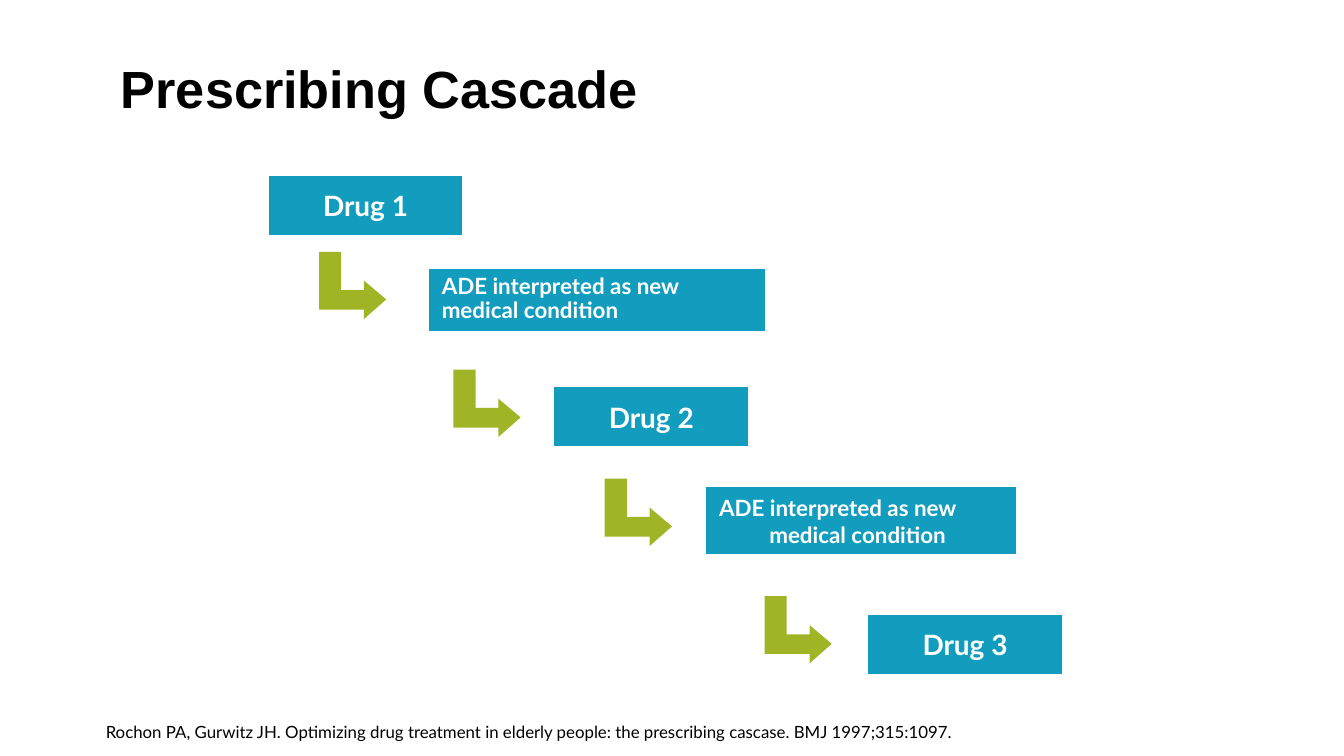
from pptx import Presentation
from pptx.dml.color import RGBColor
from pptx.enum.shapes import MSO_SHAPE
from pptx.enum.text import MSO_ANCHOR, PP_ALIGN
from pptx.util import Cm, Pt

# Content: lengths in cm
TITLE = "Prescribing Cascade"
REACTION = "ADE interpreted as new medical condition"
CITATION = ("Rochon PA, Gurwitz JH. Optimizing drug treatment in elderly people: "
            "the prescribing cascase. BMJ 1997;315:1097.")
DRUG_SIZE = (3.66, 1.12)
HANGING = 0.95
DRUGS = [("Drug 1", 5.08, 3.33), ("Drug 2", 10.48, 7.32), ("Drug 3", 16.41, 11.62)]
# left, top, width, height, hanging indent, line spacing
REACTIONS = [(8.1, 5.08, 6.35, 1.17, 0, 0.9), (13.34, 9.21, 5.87, 1.27, HANGING, 1.0)]
ARROWS = [(6.03, 4.76), (8.57, 6.99), (11.43, 9.05), (14.45, 11.27)]
# Bent arrow outline, as fractions of its square
ARROW_SIDE = 1.27
ARROW_OUTLINE = [(0, 0), (0.33, 0), (0.33, 0.57), (0.67, 0.57), (0.67, 0.43),
                 (1, 0.71), (0.67, 1), (0.67, 0.86), (0, 0.86)]

THEME = {
    "box": RGBColor(0x12, 0x9D, 0xBF),
    "arrow": RGBColor(0xA1, 0xB4, 0x26),
    "light": RGBColor(0xFF, 0xFF, 0xFF),
    "dark": RGBColor(0, 0, 0),
    "heading": "Arial",
    "body": "Lato",
    "title_size": 28,
    "drug_size": 15,
    "reaction_size": 12,
    "citation_size": 9,
}


def write(frame, text, size, color, family="body", bold=True, align=PP_ALIGN.LEFT,
          spacing=1.0, hanging=0):
    frame.text = text
    paragraph = frame.paragraphs[0]
    paragraph.alignment = align
    paragraph.line_spacing = spacing
    if hanging:
        properties = paragraph._p.get_or_add_pPr()
        properties.set("marL", str(Cm(hanging)))
        properties.set("indent", str(-Cm(hanging)))
    font = paragraph.font
    font.name = THEME[family]
    font.size = Pt(THEME[size])
    font.bold = bold
    font.color.rgb = THEME[color]


def paint(shape, color):
    shape.shadow.inherit = False
    shape.fill.solid()
    shape.fill.fore_color.rgb = THEME[color]
    shape.line.fill.background()


def add_box(shapes, left, top, width, height, anchor, wrap):
    box = shapes.add_shape(MSO_SHAPE.FLOWCHART_PROCESS,
                           Cm(left), Cm(top), Cm(width), Cm(height))
    paint(box, "box")
    box.text_frame.vertical_anchor = anchor
    box.text_frame.word_wrap = wrap
    return box.text_frame


def add_arrow(shapes, left, top):
    corners = [(Cm(left + x * ARROW_SIDE), Cm(top + y * ARROW_SIDE))
               for x, y in ARROW_OUTLINE]
    outline = shapes.build_freeform(*corners[0])
    outline.add_line_segments(corners[1:], close=True)
    paint(outline.convert_to_shape(), "arrow")


def main():
    deck = Presentation()
    deck.slide_width, deck.slide_height = Cm(25.4), Cm(14.29)
    slide = deck.slides.add_slide(deck.slide_layouts[5])
    shapes = slide.shapes

    # Title
    title = shapes.title
    title.left, title.top, title.width, title.height = Cm(2.03), Cm(0.99), Cm(16.2), Cm(1.47)
    heading = title.text_frame
    heading.vertical_anchor = MSO_ANCHOR.MIDDLE
    heading.margin_top = heading.margin_bottom = 0
    write(heading, TITLE, "title_size", "dark", family="heading", spacing=0.9)

    # Cascade: drugs, the reactions they cause and the arrows between them
    for name, left, top in DRUGS:
        frame = add_box(shapes, left, top, *DRUG_SIZE, MSO_ANCHOR.MIDDLE, False)
        write(frame, name, "drug_size", "light", align=PP_ALIGN.CENTER)
    for left, top, width, height, hanging, spacing in REACTIONS:
        frame = add_box(shapes, left, top, width, height, MSO_ANCHOR.TOP, True)
        write(frame, REACTION, "reaction_size", "light", spacing=spacing, hanging=hanging)
    for left, top in ARROWS:
        add_arrow(shapes, left, top)

    # Citation
    citation = shapes.add_textbox(Cm(1.75), Cm(13.51), Cm(17.48), Cm(0.64)).text_frame
    citation.word_wrap = True
    write(citation, CITATION, "citation_size", "dark", bold=False, hanging=HANGING)

    deck.save("out.pptx")


if __name__ == "__main__":
    main()
